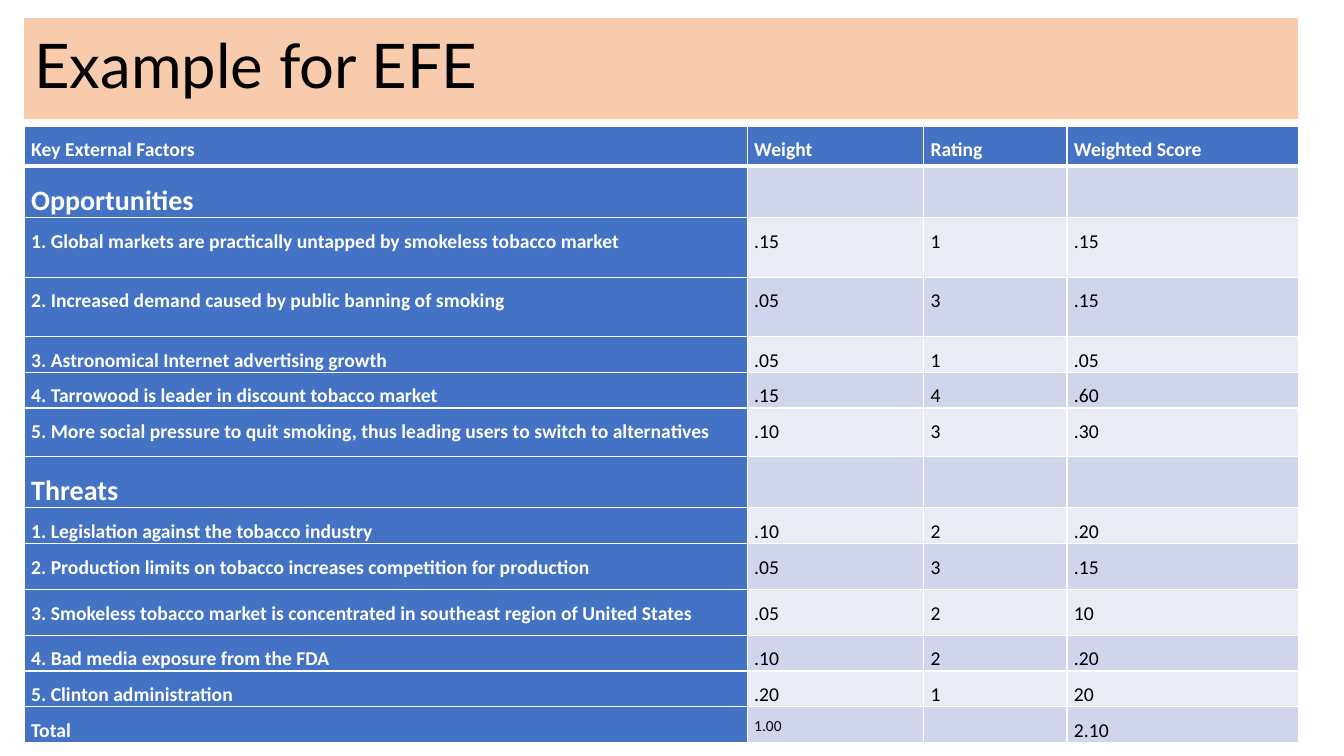
from lxml import etree
from pptx import Presentation
from pptx.dml.color import RGBColor
from pptx.enum.text import MSO_ANCHOR, MSO_AUTO_SIZE, PP_ALIGN
from pptx.oxml.ns import qn
from pptx.util import Pt

LEFT, JUSTIFY = PP_ALIGN.LEFT, PP_ALIGN.JUSTIFY
MIDDLE = MSO_ANCHOR.MIDDLE
NO_AUTOFIT = MSO_AUTO_SIZE.NONE

SLIDE_SIZE = (960, 540)
TITLE_BOX = (17.3, 13, 910, 72)
TABLE_BOX = (17.3, 90, 910, 437.8)
COLUMN_WIDTHS = (516.5, 126, 102.4, 165.1)
LOW = 25.2  # height of a one-line row

# Row height, then the four cells
HEADER = (28.8, "Key External Factors", "Weight", "Rating", "Weighted Score")
OPPORTUNITIES = [
    (LOW, "Opportunities", "", "", ""),
    (42.4, "1. Global markets are practically untapped by smokeless tobacco market",
     ".15", "1", ".15"),
    (42.4, "2. Increased demand caused by public banning of smoking", ".05", "3", ".15"),
    (LOW, "3. Astronomical Internet advertising growth", ".05", "1", ".05"),
    (LOW, "4. Tarrowood is leader in discount tobacco market", ".15", "4", ".60"),
    (34.5, "5. More social pressure to quit smoking, thus leading users to switch to alternatives",
     ".10", "3", ".30"),
]
THREATS = [
    (LOW, "Threats", "", "", ""),
    (LOW, "1. Legislation against the tobacco industry", ".10", "2", ".20"),
    (33, "2. Production limits on tobacco increases competition for production",
     ".05", "3", ".15"),
    (32.4, "3. Smokeless tobacco market is concentrated in southeast region of United States",
     ".05", "2", "10"),
    (LOW, "4. Bad media exposure from the FDA", ".10", "2", ".20"),
    (LOW, "5. Clinton administration", ".20", "1", "20"),
]
TOTAL = (LOW, "Total", "1.00", "", "2.10")


def color(value):
    return RGBColor.from_string(value)


class FactorSlide:
    title_font, table_font = "Lato", "Calibri"
    black, white = "000000", "FFFFFF"
    peach, blue = "F8CBAD", "4472C4"
    bands = ("E9EBF5", "CFD5EA")

    def __init__(self, presentation):
        self.slide = presentation.slides.add_slide(presentation.slide_layouts[5])

    def format_text(self, paragraph, font_name, size, font_color, bold, align, spacing):
        paragraph.alignment = align
        paragraph.line_spacing = spacing
        for run in paragraph.runs:
            run.font.name = font_name
            run.font.size = Pt(size)
            run.font.bold = bold
            run.font.color.rgb = color(font_color)

    def title(self, text, box):
        shape = self.slide.shapes.title
        shape.left, shape.top, shape.width, shape.height = map(Pt, box)
        shape.fill.solid()
        shape.fill.fore_color.rgb = color(self.peach)
        frame = shape.text_frame
        frame.text = text
        frame.vertical_anchor = MIDDLE
        frame.auto_size = NO_AUTOFIT
        self.format_text(frame.paragraphs[0], self.title_font, 44, self.black, False, LEFT, 0.9)

    def borders(self, cell, widths):
        properties = cell._tc.get_or_add_tcPr()
        for side, width in zip("LRTB", widths):
            line = etree.SubElement(properties, qn(f"a:ln{side}"), w=str(Pt(width)))
            fill = etree.SubElement(line, qn("a:solidFill"))
            etree.SubElement(fill, qn("a:srgbClr"), val=self.white)

    def cell(self, cell, text, fill, size, font_color, bold, align, widths):
        self.borders(cell, widths)
        cell.fill.solid()
        cell.fill.fore_color.rgb = color(fill)
        cell.margin_left = cell.margin_right = Pt(5)
        cell.margin_top = cell.margin_bottom = 0
        if text:
            cell.text_frame.text = text
            self.format_text(cell.text_frame.paragraphs[0], self.table_font, size,
                             font_color, bold, align, 1.5)

    def table(self, rows, column_widths, box):
        frame = self.slide.shapes.add_table(len(rows), len(column_widths), *map(Pt, box))
        table = frame.table
        table.first_col = True
        for column, width in zip(table.columns, column_widths):
            column.width = Pt(width)
        for row_index, (height, *texts) in enumerate(rows):
            table.rows[row_index].height = Pt(height)
            is_header = row_index == 0
            is_section = not any(texts[1:])
            # A thick rule separates the header from the body
            widths = (1, 1, 3 if row_index == 1 else 1, 3 if is_header else 1)
            for column_index, text in enumerate(texts):
                strong = is_header or column_index == 0
                fill = self.blue if strong else self.bands[row_index % 2]
                size = 20 if is_section else 11 if text == "1.00" else 14
                if is_header:
                    align = LEFT if column_index == 3 else JUSTIFY
                else:
                    align = LEFT if column_index == 0 and height > LOW else JUSTIFY
                self.cell(table.cell(row_index, column_index), text, fill, size,
                          self.white if strong else self.black, strong, align, widths)
        frame.height = Pt(box[3])


def main():
    presentation = Presentation()
    presentation.slide_width, presentation.slide_height = map(Pt, SLIDE_SIZE)
    factors = FactorSlide(presentation)

    # Heading
    factors.title("Example for EFE", TITLE_BOX)

    # External factor evaluation
    factors.table([HEADER, *OPPORTUNITIES, *THREATS, TOTAL], COLUMN_WIDTHS, TABLE_BOX)

    presentation.save("out.pptx")


if __name__ == "__main__":
    main()
